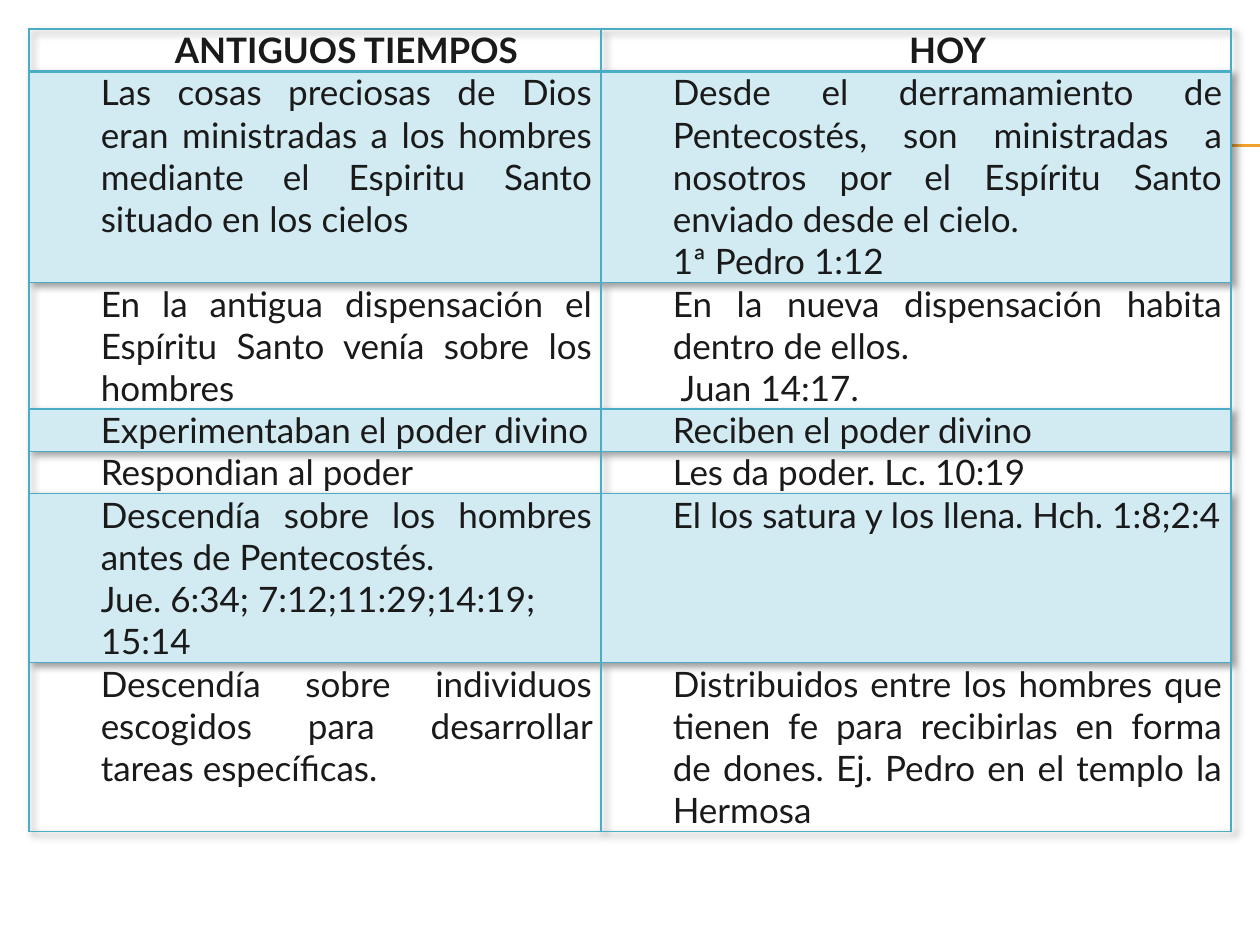
from lxml.etree import SubElement
from pptx import Presentation
from pptx.dml.color import RGBColor
from pptx.enum.shapes import MSO_CONNECTOR
from pptx.enum.text import PP_ALIGN
from pptx.oxml import parse_xml
from pptx.oxml.ns import nsdecls, qn
from pptx.util import Inches, Pt

COLORS = {"text": "1A1A1A", "band": "D2EAF1", "border": "4BACC6", "rule": "F0A22E"}
NO_STYLE = "{2D5ABB26-0587-4C30-8999-92F81FD0307C}"
LINE_HEIGHT = 0.335

# Lines of text in the row, then the paragraphs of each cell
ROWS = [
    (1, ["ANTIGUOS TIEMPOS"], ["HOY"]),
    (5,
     ["Las cosas preciosas de Dios eran ministradas a los hombres mediante "
      "el Espiritu Santo situado en los cielos"],
     ["Desde el derramamiento de Pentecostés, son ministradas a nosotros por "
      "el Espíritu Santo enviado desde el cielo. ", "1ª Pedro 1:12"]),
    (3,
     ["En la antigua dispensación el Espíritu Santo venía sobre los hombres"],
     ["En la nueva dispensación habita dentro de ellos.", " Juan 14:17. "]),
    (1, ["Experimentaban el poder divino"], ["Reciben el poder divino"]),
    (1, ["Respondian al poder"], ["Les da poder. Lc. 10:19"]),
    (4,
     ["Descendía sobre los hombres antes de Pentecostés. ",
      "Jue. 6:34; 7:12;11:29;14:19;", "15:14 "],
     ["El los satura y los llena. Hch. 1:8;2:4"]),
    (4,
     ["Descendía sobre individuos escogidos para desarrollar tareas específicas."],
     ["Distribuidos entre los hombres que tienen fe para recibirlas en forma "
      "de dones. Ej. Pedro en el templo la Hermosa"]),
]


def set_borders(cell, widths):
    """Draw the cell's sides; widths maps L, R, T and B to points."""
    properties = cell._tc.get_or_add_tcPr()
    for position, (side, width) in enumerate(widths.items()):
        properties.insert(position, parse_xml(
            f'<a:ln{side} {nsdecls("a")} w="{Pt(width)}"><a:solidFill>'
            f'<a:srgbClr val="{COLORS["border"]}"/></a:solidFill></a:ln{side}>'))


presentation = Presentation()
presentation.slide_width = Inches(10)
presentation.slide_height = Inches(7.5)
slide = presentation.slides.add_slide(presentation.slide_layouts[6])

for top in (1.15, 1.16):
    rule = slide.shapes.add_connector(
        MSO_CONNECTOR.STRAIGHT, Inches(0.56), Inches(top), Inches(10), Inches(top))
    rule.line.color.rgb = RGBColor.from_string(COLORS["rule"])
    rule.line.width = Pt(0.75)
    SubElement(rule._element.spPr, qn("a:effectLst"))

table_height = LINE_HEIGHT * sum(row[0] for row in ROWS)
table = slide.shapes.add_table(
    len(ROWS), 2, Inches(0.23), Inches(0.23), Inches(9.54), Inches(table_height)).table
table.first_row = False
table.horz_banding = False
table_properties = table._tbl.tblPr
table_properties.find(qn("a:tableStyleId")).text = NO_STYLE
table_properties.insert(0, parse_xml(
    f'<a:effectLst {nsdecls("a")}><a:outerShdw blurRad="50800" dist="38100" '
    'dir="2700000" algn="tl" rotWithShape="0"><a:prstClr val="black">'
    '<a:alpha val="40000"/></a:prstClr></a:outerShdw></a:effectLst>'))
for column, width in zip(table.columns, (4.54, 5)):
    column.width = Inches(width)

cell_margins = {"margin_left": Inches(0.07), "margin_right": Inches(0.07),
                "margin_top": 0, "margin_bottom": 0}
for row_index, (line_count, *cells) in enumerate(ROWS):
    table.rows[row_index].height = Inches(LINE_HEIGHT * line_count)
    is_header = row_index == 0
    font_format = {"name": "Lato", "size": Pt(20), "bold": is_header}
    for column_index, paragraphs in enumerate(cells):
        cell = table.cell(row_index, column_index)
        for name, value in cell_margins.items():
            setattr(cell, name, value)
        if row_index % 2:
            cell.fill.solid()
            cell.fill.fore_color.rgb = RGBColor.from_string(COLORS["band"])
        else:
            cell.fill.background()
        set_borders(cell, {"L": 1, "R": 1, "T": 2.25 if row_index == 1 else 1,
                           "B": 2.25 if is_header else 1})
        text_frame = cell.text_frame
        for index, text in enumerate(paragraphs):
            paragraph = text_frame.add_paragraph() if index else text_frame.paragraphs[0]
            paragraph.alignment = PP_ALIGN.CENTER if is_header else PP_ALIGN.JUSTIFY
            paragraph._p.get_or_add_pPr().set("marL", str(Inches(0.5)))
            run = paragraph.add_run()
            run.text = text
            for name, value in font_format.items():
                setattr(run.font, name, value)
            run.font.color.rgb = RGBColor.from_string(COLORS["text"])

presentation.save("out.pptx")
